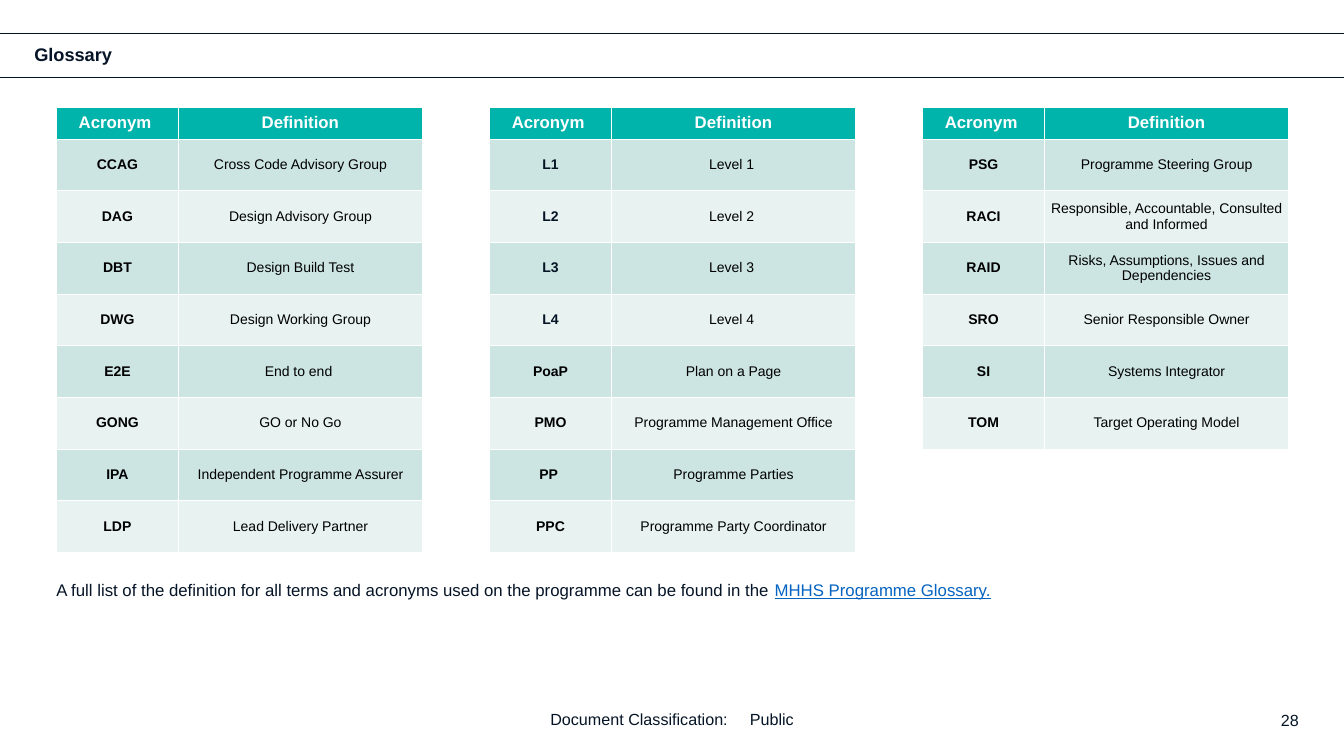
from lxml.etree import SubElement
from pptx import Presentation
from pptx.dml.color import RGBColor
from pptx.enum.shapes import MSO_CONNECTOR
from pptx.enum.text import MSO_ANCHOR, PP_ALIGN
from pptx.oxml.ns import qn
from pptx.util import Inches, Pt

HEADER = ("Acronym ", "Definition")
GLOSSARY = [
    [
        ("CCAG", "Cross Code Advisory Group"),
        ("DAG", "Design Advisory Group"),
        ("DBT", "Design Build Test"),
        ("DWG", "Design Working Group"),
        ("E2E", "End to end "),
        ("GONG", "GO or No Go"),
        ("IPA", "Independent Programme Assurer"),
        ("LDP", "Lead Delivery Partner"),
    ],
    [
        ("L1", "Level 1 "),
        ("L2", "Level 2 "),
        ("L3", "Level 3 "),
        ("L4", "Level 4 "),
        ("PoaP", "Plan on a Page"),
        ("PMO", "Programme Management Office"),
        ("PP ", "Programme Parties"),
        ("PPC", "Programme Party Coordinator"),
    ],
    [
        ("PSG", "Programme Steering Group"),
        ("RACI", "Responsible, Accountable, Consulted and Informed"),
        ("RAID", "Risks, Assumptions, Issues and Dependencies"),
        ("SRO", "Senior Responsible Owner"),
        ("SI", "Systems Integrator"),
        ("TOM", "Target Operating Model"),
    ],
]
TABLE_TOP = 1.06
FIRST_LEFT, LAST_LEFT = 0.56, 9.15
TABLE_PITCH = (LAST_LEFT - FIRST_LEFT) / (len(GLOSSARY) - 1)
COLUMN_WIDTHS = (1.21, 2.42)
HEADER_HEIGHT = 0.32
ROW_HEIGHT = (4.42 - HEADER_HEIGHT) / len(GLOSSARY[0])


def color(value):
    return RGBColor.from_string(value)


class GlossarySlide:
    font = "Arial"
    ink = "041425"
    title_ink = "051426"
    link = "0563C1"
    black = "000000"
    white = "FFFFFF"
    teal = "00B4AC"
    bands = ("CCE5E3", "E7F2F1")

    def __init__(self, deck):
        self.page = deck.slides.add_slide(deck.slide_layouts[5])

    def style(self, span, size, ink, bold=False, underline=False):
        span.font.name = self.font
        span.font.size = Pt(size)
        span.font.color.rgb = color(ink)
        span.font.bold = bold
        span.font.underline = underline

    def rule(self, top):
        line = self.page.shapes.add_connector(
            MSO_CONNECTOR.STRAIGHT, Inches(0), Inches(top), Inches(13.33), Inches(top))
        line.line.color.rgb = color(self.ink)
        line.line.width = Pt(0.5)
        SubElement(line._element.spPr, qn("a:effectLst"))

    def title(self, text, left, top, width, height):
        box = self.page.shapes.title
        box.left, box.top = Inches(left), Inches(top)
        box.width, box.height = Inches(width), Inches(height)
        frame = box.text_frame
        frame.text = text
        frame.margin_left = frame.margin_right = 0
        frame.margin_top = frame.margin_bottom = 0
        frame.vertical_anchor = MSO_ANCHOR.MIDDLE
        para = frame.paragraphs[0]
        para.alignment = PP_ALIGN.LEFT
        para.line_spacing = 0.9
        self.style(para.runs[0], 13, self.title_ink, bold=True)

    def text(self, text, left, top, width, height, size, ink,
             align=PP_ALIGN.LEFT, anchor=MSO_ANCHOR.TOP):
        """Add a wrapped text box and return its paragraph."""
        box = self.page.shapes.add_textbox(
            Inches(left), Inches(top), Inches(width), Inches(height))
        frame = box.text_frame
        frame.word_wrap = True
        frame.vertical_anchor = anchor
        frame.text = text
        para = frame.paragraphs[0]
        para.alignment = align
        self.style(para.runs[0], size, ink)
        return para

    def tabbed_text(self, label, value, left, top, width, height, size, tab):
        """Add a label and a value that starts at a tab stop."""
        para = self.text(f"{label}\t{value}", left, top, width, height,
                         size, self.ink, anchor=MSO_ANCHOR.MIDDLE)
        stops = SubElement(para._p.get_or_add_pPr(), qn("a:tabLst"))
        SubElement(stops, qn("a:tab"), pos=str(Inches(tab)), algn="l")

    def cell(self, cell, text, fill, size, ink, bold):
        cell.fill.solid()
        cell.fill.fore_color.rgb = color(fill)
        cell.vertical_anchor = MSO_ANCHOR.MIDDLE
        cell.margin_left = cell.margin_right = 0
        cell.margin_top = cell.margin_bottom = 0
        cell.text = text
        para = cell.text_frame.paragraphs[0]
        para.alignment = PP_ALIGN.CENTER
        self.style(para.runs[0], size, ink, bold)
        properties = cell._tc.get_or_add_tcPr()
        for index, side in enumerate(("lnL", "lnR", "lnT", "lnB")):
            border = properties.makeelement(qn(f"a:{side}"), {"w": str(Pt(0.5))})
            fill_element = SubElement(border, qn("a:solidFill"))
            SubElement(fill_element, qn("a:srgbClr"), val=self.white)
            properties.insert(index, border)

    def table(self, entries, left, top):
        rows = [HEADER, *entries]
        height = HEADER_HEIGHT + ROW_HEIGHT * len(entries)
        table = self.page.shapes.add_table(
            len(rows), len(HEADER), Inches(left), Inches(top),
            Inches(sum(COLUMN_WIDTHS)), Inches(height)).table
        for column, width in zip(table.columns, COLUMN_WIDTHS):
            column.width = Inches(width)
        for row_index, texts in enumerate(rows):
            is_header = row_index == 0
            table.rows[row_index].height = Inches(HEADER_HEIGHT if is_header else ROW_HEIGHT)
            for column_index, text in enumerate(texts):
                cell = table.cell(row_index, column_index)
                if is_header:
                    self.cell(cell, text, self.teal, 12, self.white, bold=True)
                else:
                    is_level = column_index == 0 and texts[1].startswith("Level")
                    self.cell(cell, text, self.bands[(row_index - 1) % 2], 10,
                              self.ink if is_level else self.black,
                              bold=column_index == 0)


def main():
    deck = Presentation()
    deck.slide_width, deck.slide_height = Inches(13.33), Inches(7.5)
    slide = GlossarySlide(deck)

    for top in (0.33, 0.77):
        slide.rule(top)
    slide.title("Glossary", 0.34, 0.44, 3.96, 0.23)
    slide.text("28", 9.98, 7, 3, 0.4, 11.5, slide.ink, align=PP_ALIGN.RIGHT)

    for index, entries in enumerate(GLOSSARY):
        slide.table(entries, FIRST_LEFT + TABLE_PITCH * index, TABLE_TOP)

    note = slide.text(
        "A full list of the definition for all terms and acronyms used on the "
        "programme can be found in the ",
        0.46, 5.7, 12.22, 0.3, 12, slide.title_ink)
    note.space_after = Pt(6)
    span = note.add_run()
    span.text = "MHHS Programme Glossary."
    slide.style(span, 12, slide.link, underline=True)

    slide.tabbed_text("Document Classification:", "Public",
                      5.36, 6.93, 3.56, 0.4, 11.5, tab=1.98)
    deck.save("out.pptx")


if __name__ == "__main__":
    main()
